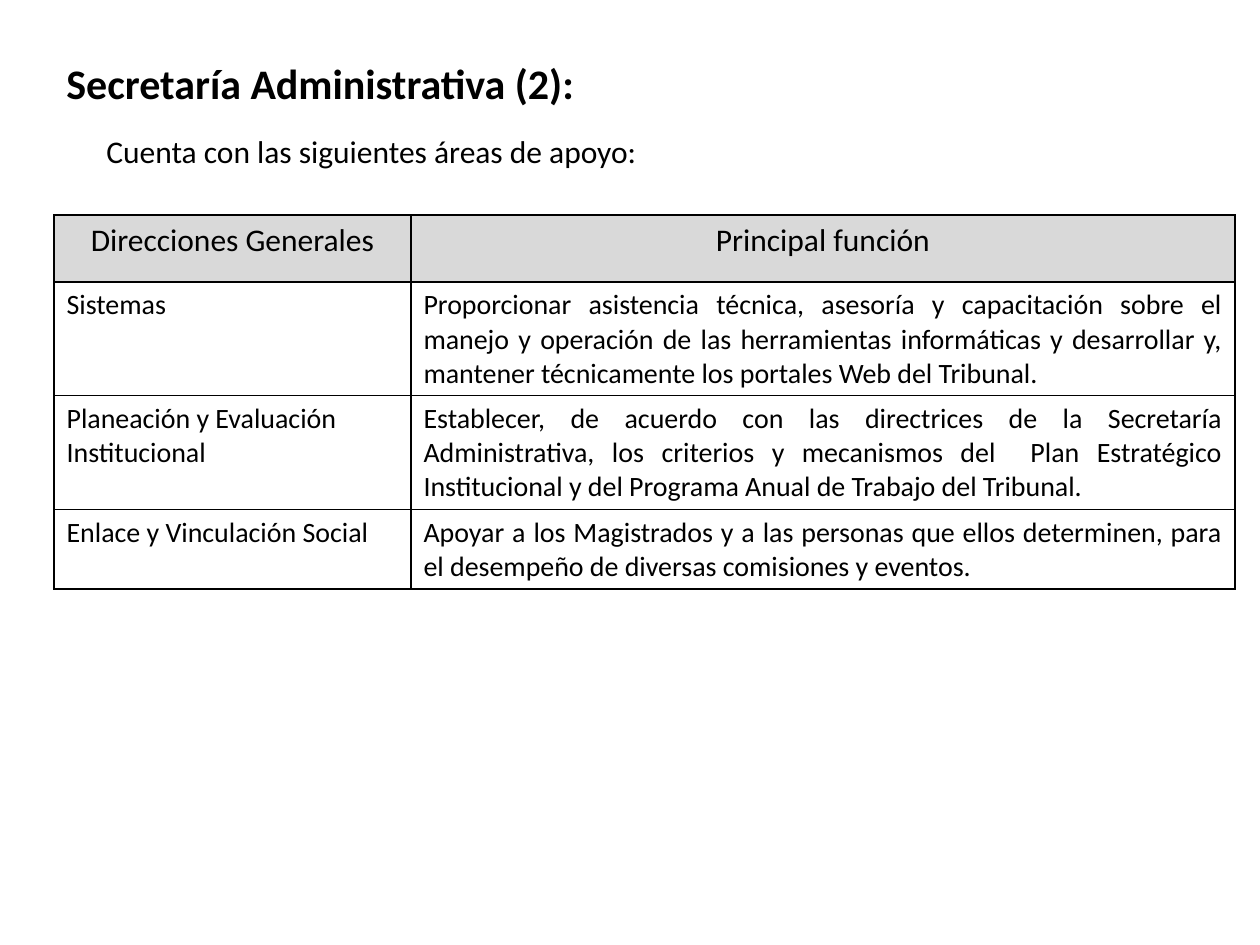
from lxml import etree
from pptx import Presentation
from pptx import util as u
from pptx.dml.color import RGBColor
from pptx.enum import text
from pptx.oxml.ns import qn

PX = u.Inches(1) // 126
THEME = {
    "font": "Calibri",
    "ink": RGBColor.from_string("000000"),
    "header_fill": RGBColor.from_string("D9D9D9"),
    "title": u.Pt(24),
    "lead": u.Pt(18),
    "body": u.Pt(16),
}
ALIGN = text.PP_ALIGN
COLUMNS = [357, 824]
ROW_HEIGHTS = [67, 113, 114, 79]
ROWS = [
    ("Direcciones Generales", "Principal función"),
    ("Sistemas",
     "Proporcionar asistencia técnica, asesoría y capacitación sobre el manejo y operación de las "
     "herramientas informáticas y desarrollar y, mantener técnicamente los portales Web del Tribunal."),
    ("Planeación y Evaluación Institucional",
     "Establecer, de acuerdo con las directrices de la Secretaría Administrativa, los criterios y "
     "mecanismos del  Plan Estratégico Institucional y del Programa Anual de Trabajo del Tribunal."),
    ("Enlace y Vinculación Social",
     "Apoyar a los Magistrados y a las personas que ellos determinen, para el desempeño de diversas "
     "comisiones y eventos."),
]


def write(frame, wording, size, align, bold=False):
    frame.word_wrap = True
    paragraph = frame.paragraphs[0]
    paragraph.text = wording
    paragraph.alignment = align
    font = paragraph.font
    font.name, font.size, font.bold = THEME["font"], THEME[size], bold
    font.color.rgb = THEME["ink"]
    return paragraph


def add_borders(cell):
    properties = cell._tc.get_or_add_tcPr()
    for position, side in enumerate(("lnL", "lnR", "lnT", "lnB")):
        line = etree.Element(qn(f"a:{side}"), w=str(u.Pt(1)))
        fill = etree.SubElement(line, qn("a:solidFill"))
        etree.SubElement(fill, qn("a:srgbClr"), val=str(THEME["ink"]))
        properties.insert(position, line)


presentation = Presentation()
presentation.slide_width, presentation.slide_height = u.Inches(10), u.Inches(7.5)
slide = presentation.slides.add_slide(presentation.slide_layouts[6])

title = slide.shapes.add_textbox(54 * PX, 57 * PX, 694 * PX, 58 * PX)
paragraph = write(title.text_frame, "Secretaría Administrativa (2):", "title", ALIGN.LEFT, bold=True)
paragraph.line_spacing = 0.9

intro = slide.shapes.add_textbox(94 * PX, 126 * PX, 1062 * PX, 50 * PX)
write(intro.text_frame, "Cuenta con las siguientes áreas de apoyo:", "lead", ALIGN.JUSTIFY)

table = slide.shapes.add_table(
    len(ROWS), len(COLUMNS), 54 * PX, 215 * PX, sum(COLUMNS) * PX, sum(ROW_HEIGHTS) * PX
).table
table.first_row = table.horz_banding = False
for column, width in zip(table.columns, COLUMNS):
    column.width = width * PX
for row_index, (row, height, wordings) in enumerate(zip(table.rows, ROW_HEIGHTS, ROWS)):
    row.height = height * PX
    for cell, wording, body_align in zip(row.cells, wordings, (ALIGN.LEFT, ALIGN.JUSTIFY)):
        if row_index == 0:
            write(cell.text_frame, wording, "lead", ALIGN.CENTER)
            cell.fill.solid()
            cell.fill.fore_color.rgb = THEME["header_fill"]
        else:
            write(cell.text_frame, wording, "body", body_align)
            cell.fill.background()
        add_borders(cell)

presentation.save("out.pptx")
